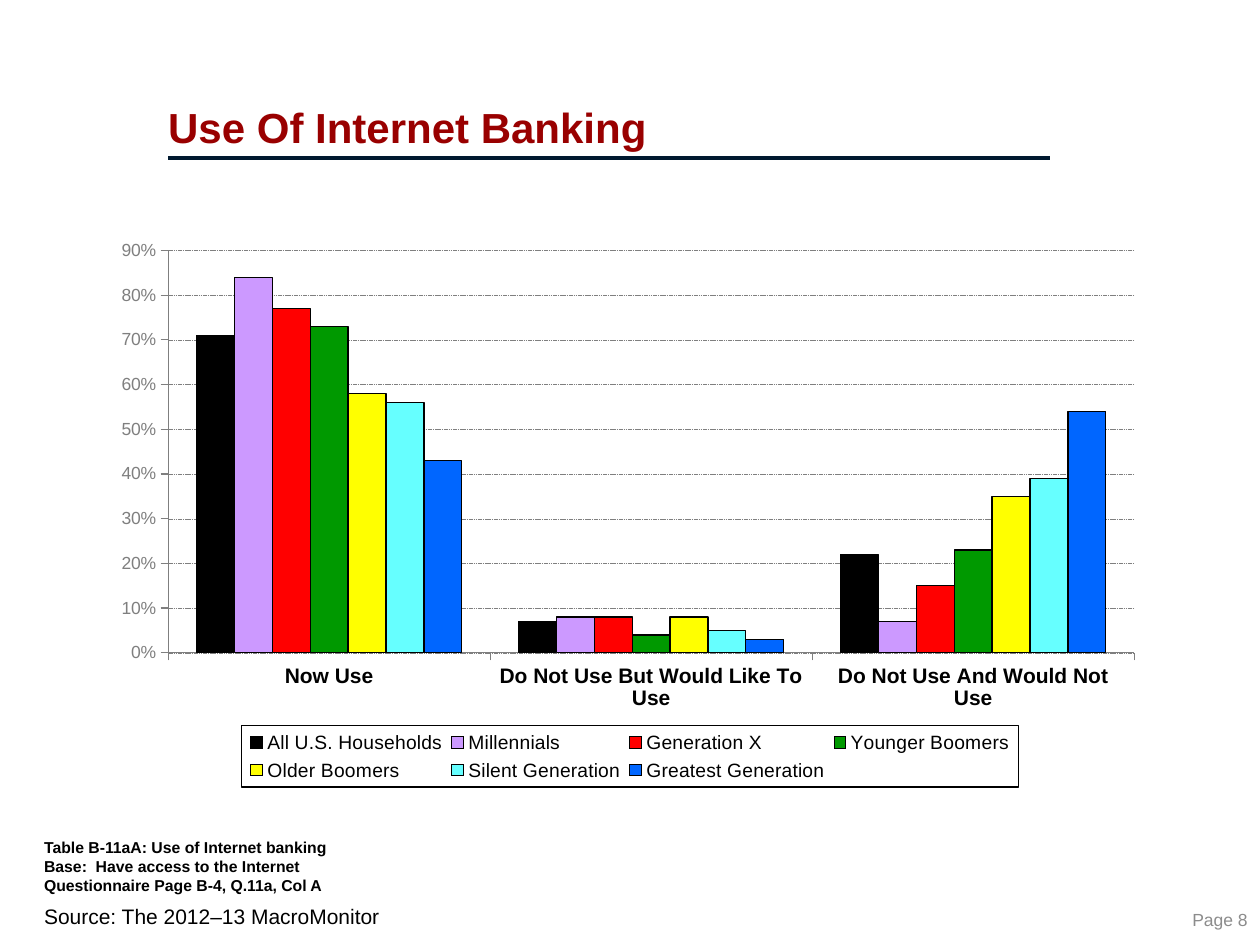
from dataclasses import dataclass

from lxml import etree
from pptx import Presentation
from pptx.chart.data import CategoryChartData
from pptx.dml.color import RGBColor
from pptx.enum.chart import XL_CHART_TYPE, XL_LEGEND_POSITION, XL_TICK_MARK
from pptx.enum.dml import MSO_LINE
from pptx.enum.shapes import MSO_CONNECTOR
from pptx.enum.text import MSO_ANCHOR, MSO_AUTO_SIZE, PP_ALIGN
from pptx.oxml import parse_xml
from pptx.oxml.ns import nsdecls, qn
from pptx.util import Cm, Pt

COLUMN = XL_CHART_TYPE.COLUMN_CLUSTERED
BOTTOM = XL_LEGEND_POSITION.BOTTOM
OUT = XL_TICK_MARK.OUTSIDE
DOTS = MSO_LINE.SQUARE_DOT
STRAIGHT = MSO_CONNECTOR.STRAIGHT
TOP, MIDDLE, BASE = MSO_ANCHOR.TOP, MSO_ANCHOR.MIDDLE, MSO_ANCHOR.BOTTOM
LEFT, RIGHT = PP_ALIGN.LEFT, PP_ALIGN.RIGHT

BLACK = RGBColor(0x00, 0x00, 0x00)
MAROON = RGBColor(0x99, 0x00, 0x00)
NAVY = RGBColor(0x00, 0x19, 0x2F)
GREY = RGBColor(0x7F, 0x7F, 0x7F)
PALE = RGBColor(0x8C, 0x8C, 0x8C)
LILAC = RGBColor(0xCC, 0x99, 0xFF)
RED = RGBColor(0xFF, 0x00, 0x00)
GREEN = RGBColor(0x00, 0x99, 0x00)
YELLOW = RGBColor(0xFF, 0xFF, 0x00)
AQUA = RGBColor(0x66, 0xFF, 0xFF)
BLUE = RGBColor(0x00, 0x66, 0xFF)
FONT = "Arial"


@dataclass
class Group:
    name: str
    values: tuple
    color: RGBColor


ANSWERS = ("Now Use", "Do Not Use But Would Like To Use",
           "Do Not Use And Would Not Use")
GROUPS = (
    Group("All U.S. Households", (0.71, 0.07, 0.22), BLACK),
    Group("Millennials", (0.84, 0.08, 0.07), LILAC),
    Group("Generation X", (0.77, 0.08, 0.15), RED),
    Group("Younger Boomers", (0.73, 0.04, 0.23), GREEN),
    Group("Older Boomers", (0.58, 0.08, 0.35), YELLOW),
    Group("Silent Generation", (0.56, 0.05, 0.39), AQUA),
    Group("Greatest Generation", (0.43, 0.03, 0.54), BLUE),
)


def style(font, size: float, color: RGBColor, bold: bool = False) -> None:
    font.name, font.size, font.bold = FONT, Pt(size), bold
    font.color.rgb = color


def stroke(line, color: RGBColor, width: float) -> None:
    line.color.rgb = color
    line.width = Pt(width)


def write(shape, text: str, *, size: float, color: RGBColor = BLACK,
          bold: bool = False, align=LEFT, anchor=TOP, wrap: bool = True,
          inset: tuple = (0.25, 0.13), spacing: float = 1.0) -> None:
    frame = shape.text_frame
    frame.auto_size = MSO_AUTO_SIZE.NONE
    frame.word_wrap = wrap
    frame.vertical_anchor = anchor
    frame.margin_left = frame.margin_right = Cm(inset[0])
    frame.margin_top = frame.margin_bottom = Cm(inset[1])
    par = frame.paragraphs[0]
    par.text = text
    par.alignment = align
    par.line_spacing = spacing
    for run in par.runs:
        style(run.font, size, color, bold)


def place(part, x: float, y: float, w: float, h: float,
          inner: bool = False) -> None:
    """Fix a chart part at fractions of the chart area."""
    for old in part.findall(qn("c:layout")):
        part.remove(old)
    target = '<c:layoutTarget val="inner"/>' if inner else ""
    layout = parse_xml(
        f'<c:layout {nsdecls("c")}><c:manualLayout>{target}'
        '<c:xMode val="edge"/><c:yMode val="edge"/>'
        f'<c:x val="{x}"/><c:y val="{y}"/><c:w val="{w}"/><c:h val="{h}"/>'
        '</c:manualLayout></c:layout>')
    if inner:
        part.insert(0, layout)
    else:
        part.find(qn("c:legendPos")).addnext(layout)


def draw_chart(slide) -> None:
    data = CategoryChartData(number_format="0%")
    data.categories = ANSWERS
    for group in GROUPS:
        data.add_series(group.name, group.values)
    chart = slide.shapes.add_chart(
        COLUMN, Cm(2.12), Cm(4.6), Cm(21.17), Cm(11.28), data).chart
    chart.has_title = False
    style(chart.font, 10, BLACK)

    # Columns
    plot = chart.plots[0]
    plot.gap_width, plot.overlap = 150, 0
    plot.vary_by_categories = False
    for series, group in zip(plot.series, GROUPS):
        series.format.fill.solid()
        series.format.fill.fore_color.rgb = group.color
        stroke(series.format.line, BLACK, 0.75)

    # Axes
    for axis in (chart.category_axis, chart.value_axis):
        axis.major_tick_mark = OUT
        stroke(axis.format.line, GREY, 0.75)
    style(chart.category_axis.tick_labels.font, 12, BLACK, True)
    scale = chart.value_axis
    scale.minimum_scale, scale.maximum_scale = 0, 0.9
    scale.major_unit = 0.1
    scale.tick_labels.number_format = "0%"
    scale.tick_labels.number_format_is_linked = False
    style(scale.tick_labels.font, 10, GREY)
    grid = scale.major_gridlines.format.line
    stroke(grid, GREY, 0.25)
    grid.dash_style = DOTS

    # Legend with a thin frame
    chart.has_legend = True
    legend = chart.legend
    legend.position = BOTTOM
    legend.include_in_layout = False
    style(legend.font, 11, BLACK)
    key = legend.font._element.getparent().getparent().getparent()
    key = key if key.tag == qn("c:legend") else legend._element
    key.find(qn("c:txPr")).addprevious(parse_xml(
        f'<c:spPr {nsdecls("c", "a")}><a:ln w="9525"><a:solidFill>'
        f'<a:srgbClr val="{BLACK}"/></a:solidFill></a:ln></c:spPr>'))
    place(key, 0.13, 0.89, 0.74, 0.11)
    place(chart._chartSpace.chart.plotArea, 0.06, 0.04, 0.92, 0.72, True)


def main() -> None:
    deck = Presentation()
    deck.slide_width, deck.slide_height = Cm(25.4), Cm(19.05)
    slide = deck.slides.add_slide(deck.slide_layouts[5])
    shapes = slide.shapes

    # Title and rule
    title = shapes.title
    title.left, title.top = Cm(3.39), Cm(0.2)
    title.width, title.height = Cm(18.2), Cm(2.98)
    write(title, "Use Of Internet Banking", size=24, color=MAROON, bold=True,
          anchor=BASE, inset=(0, 0.13), spacing=0.8)
    rule = shapes.add_connector(
        STRAIGHT, Cm(3.39), Cm(3.18), Cm(21.17), Cm(3.18))
    stroke(rule.line, NAVY, 2)
    etree.SubElement(rule._element.spPr, qn("a:effectLst"))

    draw_chart(slide)

    # Notes under the chart
    note = shapes.add_textbox(Cm(0), Cm(16.31), Cm(17.83), Cm(2.06))
    write(note, "Table B-11aA: Use of Internet banking\v"
          "Base:  Have access to the Internet\v"
          "Questionnaire Page B-4, Q.11a, Col A",
          size=9, bold=True, anchor=BASE, wrap=False, inset=(0.89, 0.33))
    source = shapes.add_textbox(Cm(0.64), Cm(18.08), Cm(21.8), Cm(0.76))
    write(source, "Source: The 2012–13 MacroMonitor", size=12)
    page = shapes.add_textbox(Cm(23.52), Cm(18.19), Cm(1.88), Cm(0.69))
    write(page, "Page 8", size=10, color=PALE, align=RIGHT, anchor=MIDDLE,
          wrap=False)

    deck.save("out.pptx")


if __name__ == "__main__":
    main()
